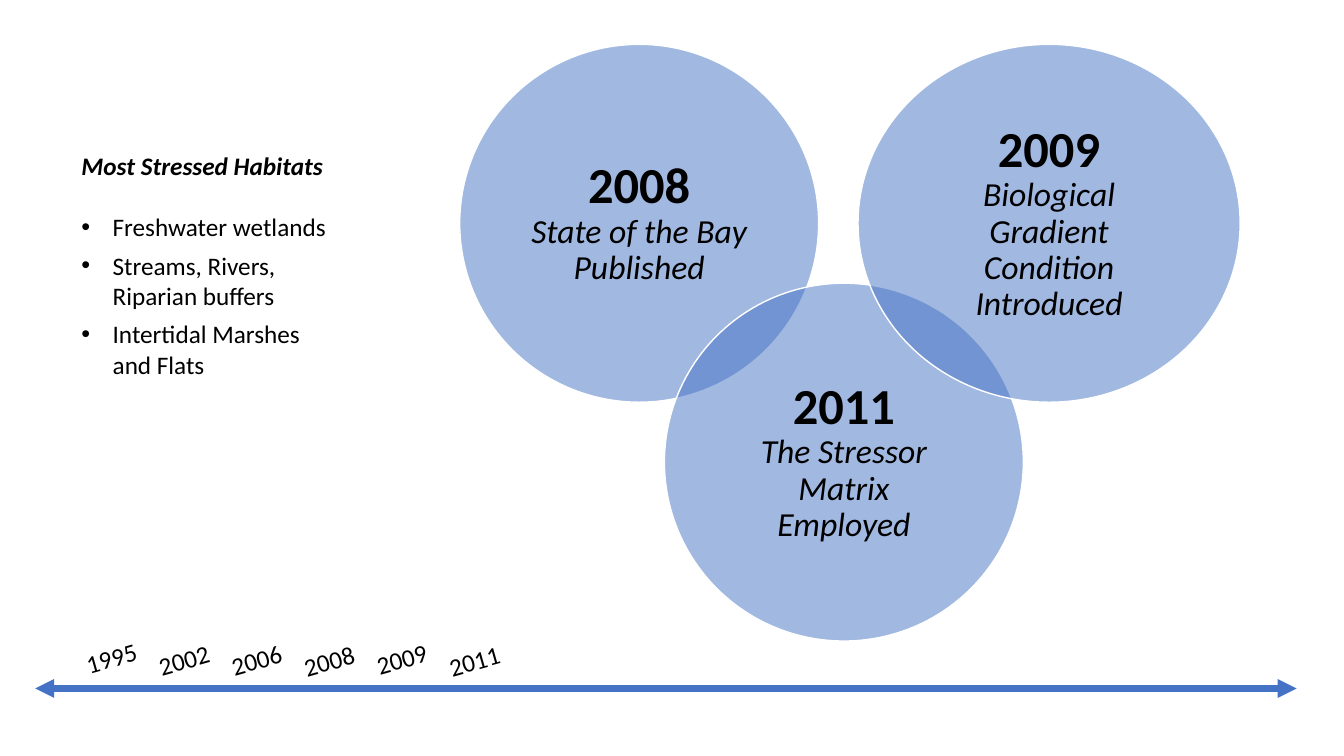
from dataclasses import dataclass

from pptx import Presentation
from pptx.dml.color import RGBColor
from pptx.enum.shapes import MSO_CONNECTOR, MSO_SHAPE
from pptx.enum.text import MSO_ANCHOR, MSO_AUTO_SIZE, PP_ALIGN
from pptx.oxml.ns import qn
from pptx.slide import Slide
from pptx.text.text import TextFrame, _Paragraph as Paragraph
from pptx.util import Emu, Pt
from lxml.etree import SubElement

EMU_PER_PX = 9144  # 100 px to the inch


@dataclass(frozen=True)
class Theme:
    font: str = "Calibri"
    ink: RGBColor = RGBColor(0x00, 0x00, 0x00)
    blue: RGBColor = RGBColor(0x44, 0x72, 0xC4)
    white: RGBColor = RGBColor(0xFF, 0xFF, 0xFF)
    year_size: int = 36
    event_size: int = 24
    body_size: int = 18


@dataclass(frozen=True)
class Milestone:
    year: str
    event: str
    left: int
    top: int
    width: int


@dataclass(frozen=True)
class TimelineYear:
    year: str
    top: int


THEME = Theme()

CIRCLE_HEIGHT = 355
CIRCLE_INSET = 15
MILESTONES = [
    Milestone("2008", "State of the Bay Published", 456, 44, 356),
    Milestone("2011", "The Stressor Matrix Employed", 659, 281, 356),
    Milestone("2009", "Biological Gradient Condition Introduced", 851, 44, 379),
]

YEAR_LEFT, YEAR_STEP, YEAR_TILT = 75, 72, 344.2
TIMELINE_YEARS = [
    TimelineYear("1995", 631),
    TimelineYear("2002", 633),
    TimelineYear("2006", 633),
    TimelineYear("2008", 634),
    TimelineYear("2009", 632),
    TimelineYear("2011", 634),
]

HABITATS = [
    "Freshwater wetlands",
    "Streams, Rivers, Riparian buffers",
    "Intertidal Marshes and Flats",
]
BULLET_INDENT = 31


def px(length: int) -> Emu:
    return Emu(length * EMU_PER_PX)


def add_run(paragraph: Paragraph, text: str, size: int,
            bold: bool = False, italic: bool = False) -> None:
    run = paragraph.add_run()
    run.text = text
    font = run.font
    font.name, font.size = THEME.font, Pt(size)
    font.bold, font.italic = bold, italic
    font.color.rgb = THEME.ink


def add_text_frame(slide: Slide, left: int, top: int, width: int,
                   height: int, tilt: float = 0) -> TextFrame:
    box = slide.shapes.add_textbox(px(left), px(top), px(width), px(height))
    box.rotation = tilt
    frame = box.text_frame
    frame.word_wrap = True
    frame.auto_size = MSO_AUTO_SIZE.SHAPE_TO_FIT_TEXT
    return frame


def add_milestone(slide: Slide, milestone: Milestone) -> None:
    circle = slide.shapes.add_shape(
        MSO_SHAPE.OVAL, px(milestone.left), px(milestone.top),
        px(milestone.width), px(CIRCLE_HEIGHT))
    circle.shadow.inherit = False
    circle.fill.solid()
    circle.fill.fore_color.rgb = THEME.blue
    blue = circle.fill._xPr.find(qn("a:solidFill")).find(qn("a:srgbClr"))
    SubElement(blue, qn("a:alpha"), val="50000")
    circle.line.color.rgb = THEME.white
    circle.line.width = Pt(1)

    frame = circle.text_frame
    frame.word_wrap = True
    frame.vertical_anchor = MSO_ANCHOR.MIDDLE
    frame.margin_left = frame.margin_right = px(CIRCLE_INSET)
    frame.margin_top = frame.margin_bottom = px(CIRCLE_INSET)
    caption = frame.paragraphs[0]
    caption.alignment = PP_ALIGN.CENTER
    caption.line_spacing = 0.9
    add_run(caption, milestone.year, THEME.year_size, bold=True)
    caption.add_line_break()
    add_run(caption, milestone.event, THEME.event_size, italic=True)


def add_timeline(slide: Slide) -> None:
    axis = slide.shapes.add_connector(
        MSO_CONNECTOR.STRAIGHT, px(35), px(683), px(1286), px(683))
    axis.line.color.rgb = THEME.blue
    axis.line.width = Pt(4.5)
    outline = axis.line._get_or_add_ln()
    for arrowhead in ("a:headEnd", "a:tailEnd"):
        SubElement(outline, qn(arrowhead), type="triangle")
    SubElement(axis._element.spPr, qn("a:effectLst"))

    for index, mark in enumerate(TIMELINE_YEARS):
        frame = add_text_frame(slide, YEAR_LEFT + index * YEAR_STEP,
                               mark.top, 81, 40, YEAR_TILT)
        add_run(frame.paragraphs[0], mark.year, THEME.body_size)


def add_bullet(paragraph: Paragraph) -> None:
    properties = paragraph._p.get_or_add_pPr()
    properties.set("marL", str(px(BULLET_INDENT)))
    properties.set("indent", str(px(-BULLET_INDENT)))
    SubElement(properties, qn("a:buFont"), typeface="Arial")
    SubElement(properties, qn("a:buChar"), char="•")


def add_habitats(slide: Slide) -> None:
    frame = add_text_frame(slide, 71, 144, 264, 239)
    heading = frame.paragraphs[0]
    heading.space_after = Pt(22)
    add_run(heading, "Most Stressed Habitats", THEME.body_size,
            bold=True, italic=True)
    for habitat in HABITATS:
        item = frame.add_paragraph()
        item.space_after = Pt(6)
        add_bullet(item)
        add_run(item, habitat, THEME.body_size)


def main() -> None:
    presentation = Presentation()
    presentation.slide_width, presentation.slide_height = px(1333), px(750)
    slide = presentation.slides.add_slide(presentation.slide_layouts[6])
    for milestone in MILESTONES:
        add_milestone(slide, milestone)
    add_timeline(slide)
    add_habitats(slide)
    presentation.save("out.pptx")


if __name__ == "__main__":
    main()
